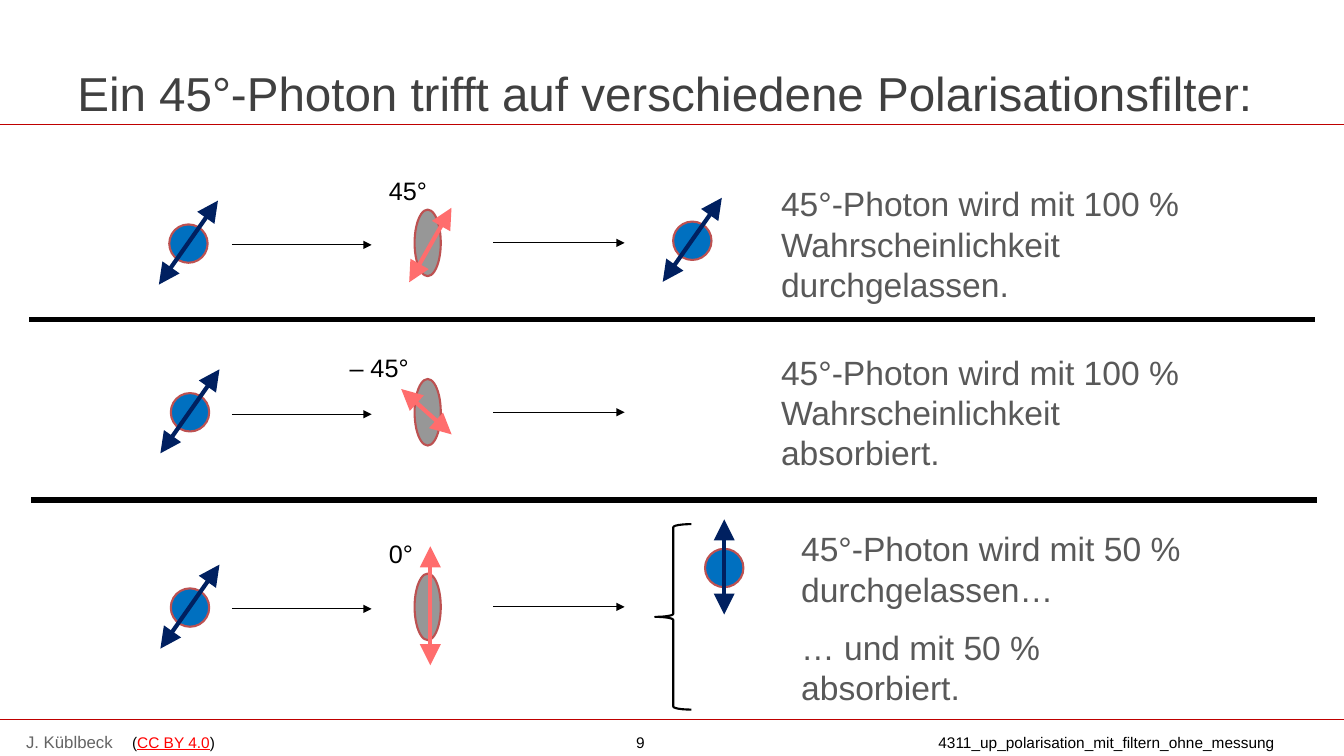
from dataclasses import dataclass

from lxml import etree
from pptx import Presentation
from pptx.dml.color import RGBColor
from pptx.enum.shapes import MSO_CONNECTOR, MSO_SHAPE
from pptx.enum.text import MSO_ANCHOR
from pptx.oxml.ns import qn
from pptx.util import Pt

STRAIGHT = MSO_CONNECTOR.STRAIGHT
ELLIPSE = MSO_SHAPE.OVAL
LEFT_BRACE = MSO_SHAPE.LEFT_BRACE
TOP, MIDDLE = MSO_ANCHOR.TOP, MSO_ANCHOR.MIDDLE

BLACK = RGBColor(0x00, 0x00, 0x00)
TITLE_GREY = RGBColor(0x40, 0x40, 0x40)
TEXT_GREY = RGBColor(0x59, 0x59, 0x59)
AUTHOR_GREY = RGBColor(0x64, 0x64, 0x64)
LINK_RED = RGBColor(0xFF, 0x00, 0x00)
RULE_RED = RGBColor(0xBF, 0x00, 0x00)
OUTLINE_RED = RGBColor(0xBD, 0x51, 0x51)
FILTER_GREY = RGBColor(0x97, 0x97, 0x97)
FILTER_AXIS = RGBColor(0xFF, 0x6D, 0x6D)
PHOTON_BLUE = RGBColor(0x00, 0x70, 0xC0)
PHOTON_AXIS = RGBColor(0x00, 0x20, 0x60)

FONT = "Arial"
SLIDE_WIDTH, SLIDE_HEIGHT = 960, 540
FILTER_X = 305.5
FILTER_WIDTH, FILTER_HEIGHT = 18.7, 47.5
PHOTON_SIZE = 27.4
DIAGONAL, VERTICAL = (21.1, -30), (0, -34)


@dataclass(frozen=True)
class Experiment:
    """One row: a 45° photon meets a filter; axis is half the filter arrow."""
    filter_y: float
    axis_x: float
    axis_y: float
    axis: tuple[float, float]
    label: str
    label_left: float
    label_top: float
    label_width: float


@dataclass(frozen=True)
class Photon:
    x: float
    y: float
    axis: tuple[float, float] = DIAGONAL


@dataclass(frozen=True)
class Outcome:
    left: float
    top: float
    width: float
    height: float
    text: str


EXPERIMENTS = [
    Experiment(173.5, 307.4, 175, (15.1, -26.6), "45°", 270.7, 121.7, 42),
    Experiment(294.5, 304.6, 294.1, (18, 16.2), "– 45°", 242.6, 248.4, 58),
    Experiment(433.5, 307.4, 432.7, (0, -42.5), "0°", 270.7, 380.9, 32),
]
PHOTONS = [
    Photon(134.6, 174),
    Photon(135.7, 294.5),
    Photon(135.7, 434),
    Photon(494.5, 172),
    Photon(517.3, 405.7, VERTICAL),
]
OUTCOMES = [
    Outcome(518.4, 127.4, 347, 96.5,
            "45°-Photon wird mit 100 % Wahrscheinlichkeit durchgelassen."),
    Outcome(518.4, 247.7, 347, 96.5,
            "45°-Photon wird mit 100 % Wahrscheinlichkeit absorbiert."),
    Outcome(532.8, 373.7, 328.3, 80.6, "45°-Photon wird mit 50 % durchgelassen…"),
    Outcome(532.8, 444.2, 301, 80.6, "… und mit 50 %\nabsorbiert."),
]


def format_span(span, size: float, color: RGBColor, underline: bool = False) -> None:
    span.font.name = FONT
    span.font.size = Pt(size)
    span.font.color.rgb = color
    span.font.underline = underline


def add_text(page, text: str, left: float, top: float, width: float, height: float, *,
             size: float, color: RGBColor, anchor=TOP, wrap: bool = True,
             inset: bool = True, indent: float = 0, before: float = 0):
    """Add a one-paragraph text box and return its paragraph."""
    box = page.shapes.add_textbox(Pt(left), Pt(top), Pt(width), Pt(height))
    frame = box.text_frame
    frame.word_wrap = wrap
    frame.vertical_anchor = anchor
    if not inset:
        frame.margin_left = frame.margin_right = Pt(0)
        frame.margin_top = frame.margin_bottom = Pt(0)
    para = frame.paragraphs[0]
    para.text = text
    para.space_before = Pt(before)
    if indent:
        properties = para._p.get_or_add_pPr()
        properties.set("marL", str(Pt(indent)))
        properties.set("indent", "0")
    for span in para.runs:
        format_span(span, size, color)
    return para


def add_line(shapes, x1: float, y1: float, x2: float, y2: float, *, color: RGBColor,
             width: float, head: bool = False, tail: bool = False,
             tip: str = "med") -> None:
    line = shapes.add_connector(STRAIGHT, Pt(x1), Pt(y1), Pt(x2), Pt(y2))
    line.line.color.rgb = color
    line.line.width = Pt(width)
    outline = line.line._get_or_add_ln()
    for tag, wanted in (("a:headEnd", head), ("a:tailEnd", tail)):
        if wanted:
            etree.SubElement(outline, qn(tag), type="triangle", w=tip, len=tip)
    etree.SubElement(line._element.spPr, qn("a:effectLst"))


def add_ellipse(shapes, x: float, y: float, width: float, height: float,
                fill: RGBColor) -> None:
    """Add an ellipse centred on x, y."""
    ellipse = shapes.add_shape(ELLIPSE, Pt(x - width / 2), Pt(y - height / 2),
                               Pt(width), Pt(height))
    ellipse.shadow.inherit = False
    ellipse.fill.solid()
    ellipse.fill.fore_color.rgb = fill
    ellipse.line.color.rgb = OUTLINE_RED
    ellipse.line.width = Pt(1.5)


def add_axis(shapes, x: float, y: float, half: tuple[float, float],
             color: RGBColor) -> None:
    """Add a double-headed polarisation arrow centred on x, y."""
    dx, dy = half
    add_line(shapes, x + dx, y + dy, x - dx, y - dy,
             color=color, width=3, head=True, tail=True, tip="lg")


def add_experiment(page, row: Experiment) -> None:
    shapes = page.shapes.add_group_shape().shapes
    add_ellipse(shapes, FILTER_X, row.filter_y, FILTER_WIDTH, FILTER_HEIGHT, FILTER_GREY)
    for start, end, drop in ((165.7, 265.5, 1.4), (352.2, 446.2, 0)):
        y = row.filter_y + drop
        add_line(shapes, start, y, end, y, color=BLACK, width=0.75, tail=True)
    add_axis(shapes, row.axis_x, row.axis_y, row.axis, FILTER_AXIS)
    add_text(page, row.label, row.label_left, row.label_top, row.label_width, 28.8,
             size=18, color=BLACK, wrap=False)


def add_photon(page, photon: Photon) -> None:
    shapes = page.shapes.add_group_shape().shapes
    add_ellipse(shapes, photon.x, photon.y, PHOTON_SIZE, PHOTON_SIZE, PHOTON_BLUE)
    add_axis(shapes, photon.x, photon.y - 0.7, photon.axis, PHOTON_AXIS)


def add_brace(page) -> None:
    brace = page.shapes.add_shape(LEFT_BRACE, Pt(468), Pt(374.4), Pt(25.9), Pt(132.5))
    brace.shadow.inherit = False
    brace.fill.background()
    brace.line.color.rgb = BLACK
    brace.line.width = Pt(1.5)


def add_footer(page) -> None:
    add_text(page, "J. Küblbeck", 11.5, 519.1, 111.6, 21.6, size=12, color=AUTHOR_GREY)
    para = add_text(page, "(", 94.3, 523.4, 850.3, 13.7,
                    size=11, color=BLACK, inset=False)
    stops = etree.SubElement(para._p.get_or_add_pPr(), qn("a:tabLst"))
    for position in (360, 576):
        etree.SubElement(stops, qn("a:tab"), pos=str(Pt(position)), algn="l")
    for text, color, underline in (
            ("CC BY 4.0", LINK_RED, True),
            (")\t9\t4311_up_polarisation_mit_filtern_ohne_messung", BLACK, False)):
        span = para.add_run()
        span.text = text
        format_span(span, 11, color, underline)


def main() -> None:
    deck = Presentation()
    deck.slide_width, deck.slide_height = Pt(SLIDE_WIDTH), Pt(SLIDE_HEIGHT)
    page = deck.slides.add_slide(deck.slide_layouts[6])
    add_footer(page)
    for y in (514.1, 88.6):
        add_line(page.shapes, 0, y, SLIDE_WIDTH, y, color=RULE_RED, width=0.75)
    add_text(page, "Ein 45°-Photon trifft auf verschiedene Polarisationsfilter:",
             48.2, 43.2, 864, 45.4, size=34, color=TITLE_GREY, anchor=MIDDLE)
    for row in EXPERIMENTS:
        add_experiment(page, row)
    for left, y in ((20.9, 228.2), (22.3, 357.1)):
        add_line(page.shapes, left, y, left + 918.7, y, color=BLACK, width=3.75)
    for outcome in OUTCOMES:
        add_text(page, outcome.text, outcome.left, outcome.top, outcome.width,
                 outcome.height, size=24, color=TEXT_GREY, indent=32.4, before=3)
    add_brace(page)
    for photon in PHOTONS:
        add_photon(page, photon)
    deck.save("out.pptx")


if __name__ == "__main__":
    main()
